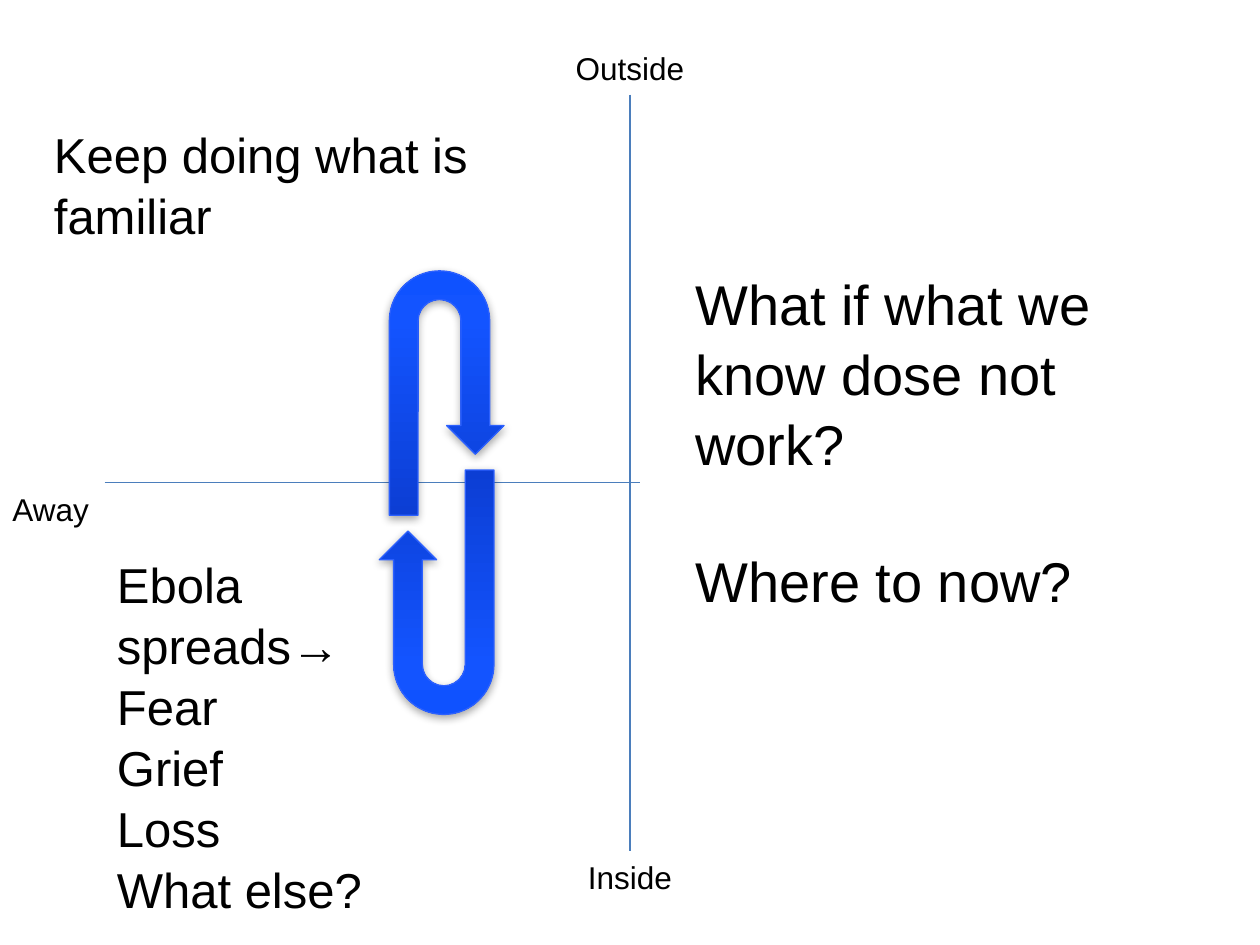
"""Build the two-axis slide with the looping arrows and its questions."""
import lxml.etree
import pptx
import pptx.dml.color
import pptx.enum.shapes
import pptx.enum.text
import pptx.oxml
import pptx.oxml.ns
import pptx.util

Inches = pptx.util.Inches
Pt = pptx.util.Pt
BLACK = pptx.dml.color.RGBColor(0x00, 0x00, 0x00)
AXIS_BLUE = pptx.dml.color.RGBColor(0x4B, 0x7E, 0xBC)
EDGE_BLUE = pptx.dml.color.RGBColor(0x2D, 0x61, 0xFE)
DARK_BLUE = pptx.dml.color.RGBColor(0x0C, 0x3E, 0xD4)
BRIGHT_BLUE = pptx.dml.color.RGBColor(0x13, 0x54, 0xFF)
END_BLUE = pptx.dml.color.RGBColor(0x0F, 0x52, 0xFF)
GRADIENT = [(0, DARK_BLUE), (80, BRIGHT_BLUE), (100, END_BLUE)]
LEFT = pptx.enum.text.PP_ALIGN.LEFT
CENTER = pptx.enum.text.PP_ALIGN.CENTER

deck = pptx.Presentation()
deck.slide_width = Inches(10)
deck.slide_height = Inches(7.5)
page = deck.slides.add_slide(deck.slide_layouts[6])


def add_text(text, *, at, size=18, align=LEFT, gap=0):
    box = page.shapes.add_textbox(*[Inches(length) for length in at])
    frame = box.text_frame
    frame.word_wrap = True
    for index, line in enumerate(text.split("\n")):
        para = frame.paragraphs[0] if index == 0 else frame.add_paragraph()
        para.alignment = align
        para.line_spacing = 1.04
        if index:
            para.space_before = Pt(gap)
        span = para.add_run()
        span.text = line
        span.font.name = "Arial"
        span.font.size = Pt(size)
        span.font.color.rgb = BLACK


for start_x, start_y, end_x, end_y in [(5, 0.75, 5, 6.75), (0.83, 3.83, 5.08, 3.83)]:
    axis = page.shapes.add_connector(
        pptx.enum.shapes.MSO_CONNECTOR.STRAIGHT,
        Inches(start_x), Inches(start_y), Inches(end_x), Inches(end_y),
    )
    axis.line.color.rgb = AXIS_BLUE
    axis.line.width = Pt(0.75)
    lxml.etree.SubElement(axis._element.spPr, pptx.oxml.ns.qn("a:effectLst"))

add_text("Outside", at=(4, 0.33, 2, 0.4), align=CENTER)
add_text("Inside", at=(4, 6.75, 2, 0.42), align=CENTER)
add_text("Away", at=(0, 3.83, 1.08, 0.4))
add_text("Ebola spreads→\nFear\nGrief\nLoss\nWhat else?", at=(0.83, 4.33, 2.58, 2.93), size=28)
add_text(
    "What if what we know dose not work?\nWhere to now?",
    at=(5.42, 2.07, 3.75, 2.79), size=32, gap=38.4,
)
add_text("Keep doing what is familiar", at=(0.33, 0.92, 4.52, 0.57), size=28)

stops = "".join(
    f'<a:gs pos="{percent * 1000}"><a:srgbClr val="{color}"/></a:gs>' for percent, color in GRADIENT
)
namespace = pptx.oxml.ns.nsdecls("a")
gradient_xml = (
    f'<a:gradFill {namespace} rotWithShape="1"><a:gsLst>{stops}</a:gsLst>'
    '<a:lin ang="16200000" scaled="0"/></a:gradFill>'
)
shadow_xml = (
    f'<a:outerShdw {namespace} blurRad="{Pt(5)}" dist="{Pt(1.8)}" dir="5400000" rotWithShape="0">'
    f'<a:srgbClr val="{BLACK}"><a:alpha val="35000"/></a:srgbClr></a:outerShdw>'
)

for left, top, rotation in [(3.09, 2.15, 0), (3.01, 3.73, 180)]:
    arrow = page.shapes.add_shape(
        pptx.enum.shapes.MSO_SHAPE.U_TURN_ARROW,
        Inches(left), Inches(top), Inches(0.91), Inches(1.94),
    )
    arrow.rotation = rotation
    arrow.line.color.rgb = EDGE_BLUE
    arrow.line.width = Pt(0.75)
    arrow.shadow.inherit = False
    properties = arrow._element.spPr
    properties.find(pptx.oxml.ns.qn("a:prstGeom")).addnext(pptx.oxml.parse_xml(gradient_xml))
    properties.find(pptx.oxml.ns.qn("a:effectLst")).append(pptx.oxml.parse_xml(shadow_xml))

deck.save("out.pptx")
